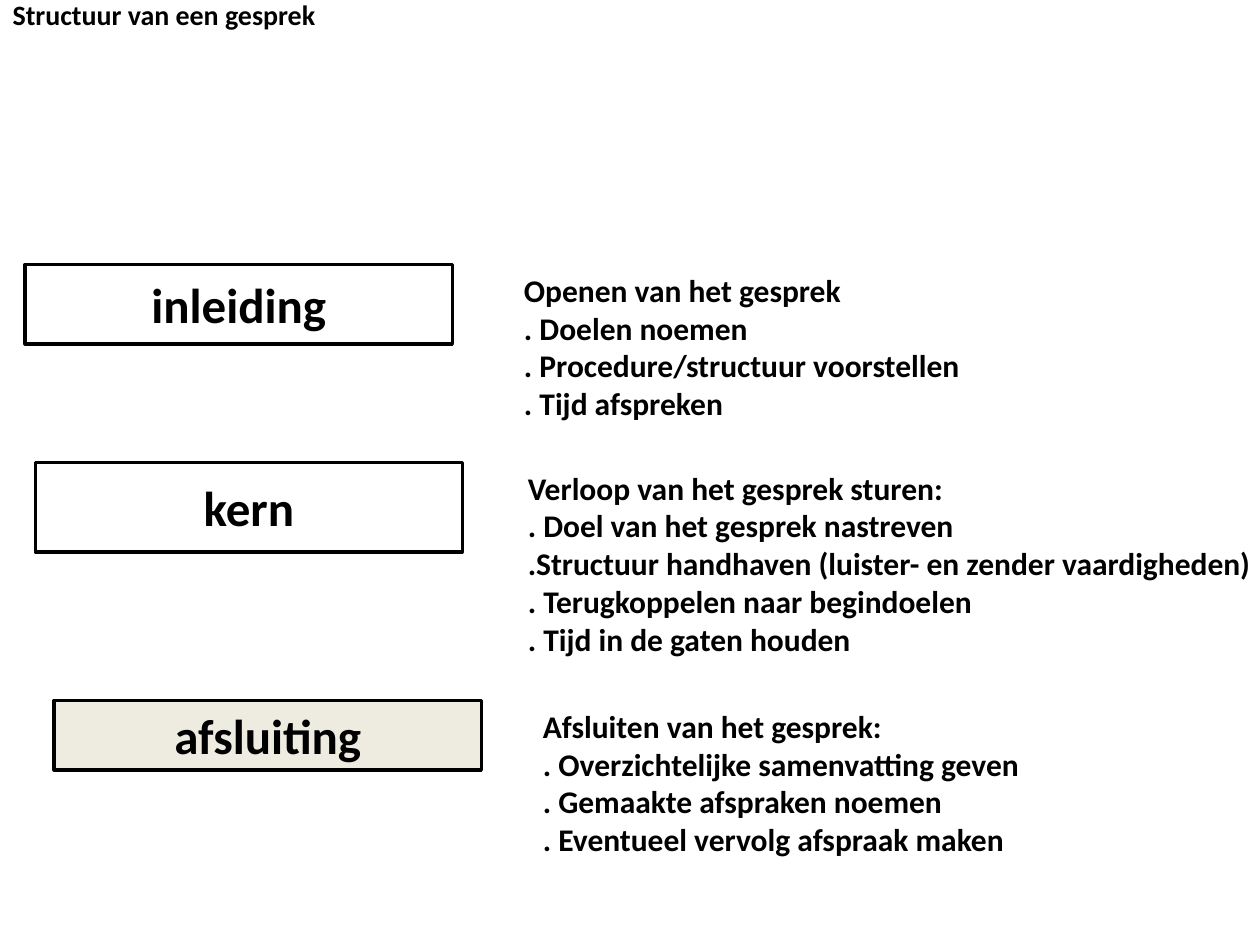
import pptx
import pptx.dml.color
import pptx.enum.shapes
import pptx.enum.text
import pptx.util

Inches = pptx.util.Inches
Align = pptx.enum.text.PP_ALIGN
Anchor = pptx.enum.text.MSO_ANCHOR
AutoSize = pptx.enum.text.MSO_AUTO_SIZE

COLORS = {"ink": "000000", "white": "FFFFFF", "cream": "EEECE1"}
PHASE_WIDTH = 3.39

# Phase name, left, top, height, fill; then left, width, height and lines of its steps
PHASES = [
    ("inleiding", 0.2, 2.1, 0.63, "white", 4.06, 3.68, 1.31,
     ["Openen van het gesprek",
      ". Doelen noemen",
      ". Procedure/structuur voorstellen",
      ". Tijd afspreken"]),
    ("kern", 0.28, 3.67, 0.71, "white", 4.09, 5.99, 1.62,
     ["Verloop van het gesprek sturen:",
      ". Doel van het gesprek nastreven",
      ".Structuur handhaven (luister- en zender vaardigheden)",
      ". Terugkoppelen naar begindoelen",
      ". Tijd in de gaten houden"]),
    ("afsluiting", 0.43, 5.56, 0.55, "cream", 4.21, 4.01, 1.31,
     ["Afsluiten van het gesprek:",
      ". Overzichtelijke samenvatting geven",
      ". Gemaakte afspraken noemen",
      ". Eventueel vervolg afspraak maken"]),
]


def rgb(name):
    return pptx.dml.color.RGBColor.from_string(COLORS[name])


def write(frame, lines, size=18, align=Align.LEFT, anchor=Anchor.TOP,
          wrap=False, fit=AutoSize.NONE):
    frame.text = "\n".join(lines)
    frame.word_wrap = wrap
    frame.auto_size = fit
    frame.vertical_anchor = anchor
    for paragraph in frame.paragraphs:
        paragraph.alignment = align
        paragraph.font.name = "Calibri"
        paragraph.font.size = pptx.util.Pt(size)
        paragraph.font.bold = True
        paragraph.font.color.rgb = rgb("ink")


def place_title(slide, text):
    title = slide.shapes.title
    title.left, title.top = Inches(0), Inches(0)
    title.width, title.height = Inches(10), Inches(0.5)
    title.text_frame.margin_top = Inches(0)
    title.text_frame.margin_bottom = Inches(0.27)
    write(title.text_frame, [text], size=16, anchor=Anchor.MIDDLE)


def add_phase(slide, name, left, top, height, fill):
    phase = slide.shapes.add_shape(
        pptx.enum.shapes.MSO_SHAPE.RECTANGLE,
        Inches(left), Inches(top), Inches(PHASE_WIDTH), Inches(height))
    phase.shadow.inherit = False
    phase.fill.solid()
    phase.fill.fore_color.rgb = rgb(fill)
    phase.line.color.rgb = rgb("ink")
    phase.line.width = pptx.util.Pt(2)
    write(phase.text_frame, [name], size=28, align=Align.CENTER,
          anchor=Anchor.MIDDLE, wrap=True)


def add_steps(slide, lines, left, top, width, height):
    steps = slide.shapes.add_textbox(
        Inches(left), Inches(top), Inches(width), Inches(height))
    write(steps.text_frame, lines, fit=AutoSize.SHAPE_TO_FIT_TEXT)


def main():
    deck = pptx.Presentation()
    deck.slide_width, deck.slide_height = Inches(10), Inches(7.5)
    slide = deck.slides.add_slide(deck.slide_layouts[5])
    place_title(slide, "Structuur van een gesprek")
    for (name, left, top, height, fill,
         steps_left, steps_width, steps_height, lines) in PHASES:
        add_phase(slide, name, left, top, height, fill)
        add_steps(slide, lines, steps_left, top, steps_width, steps_height)
    deck.save("out.pptx")


if __name__ == "__main__":
    main()
